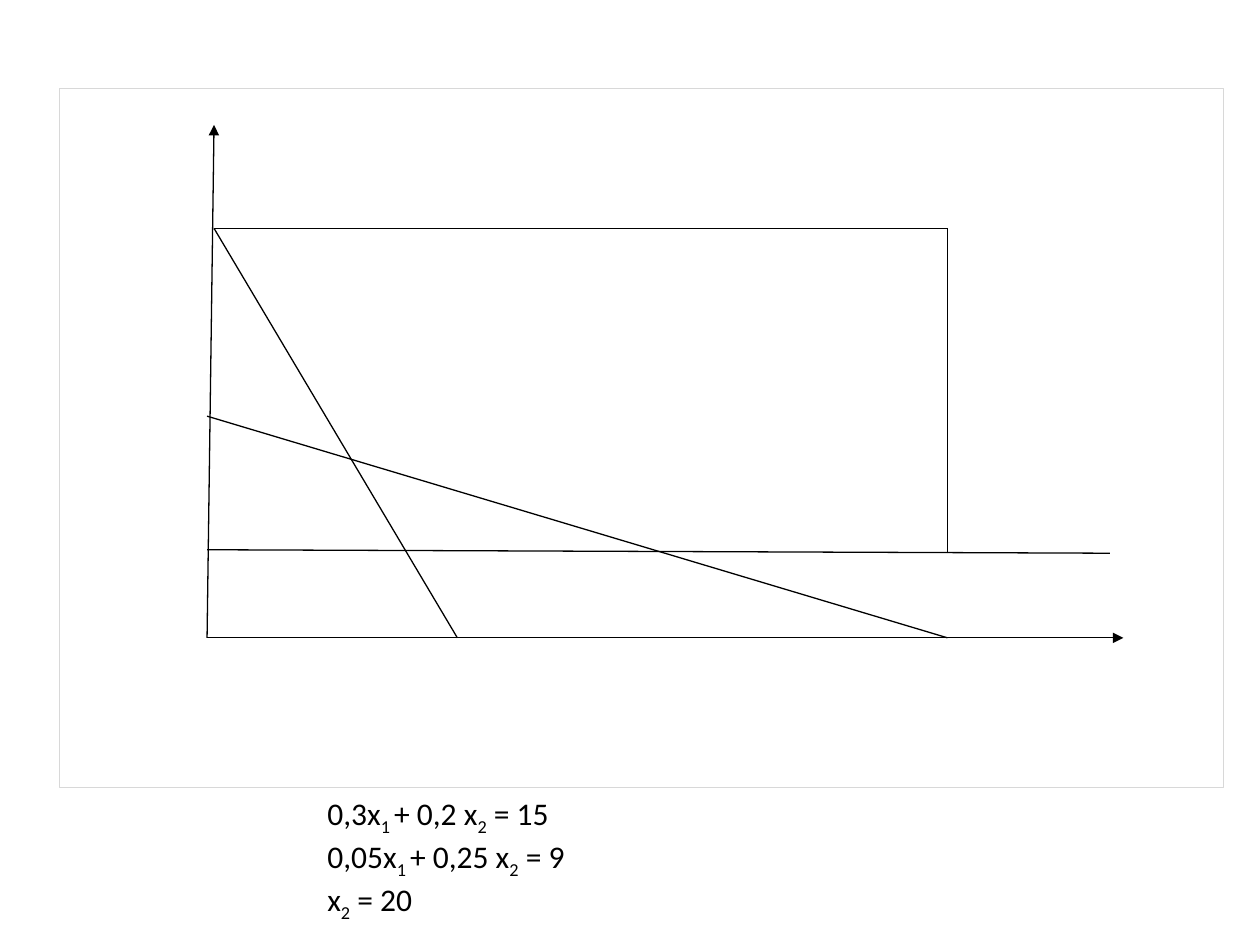
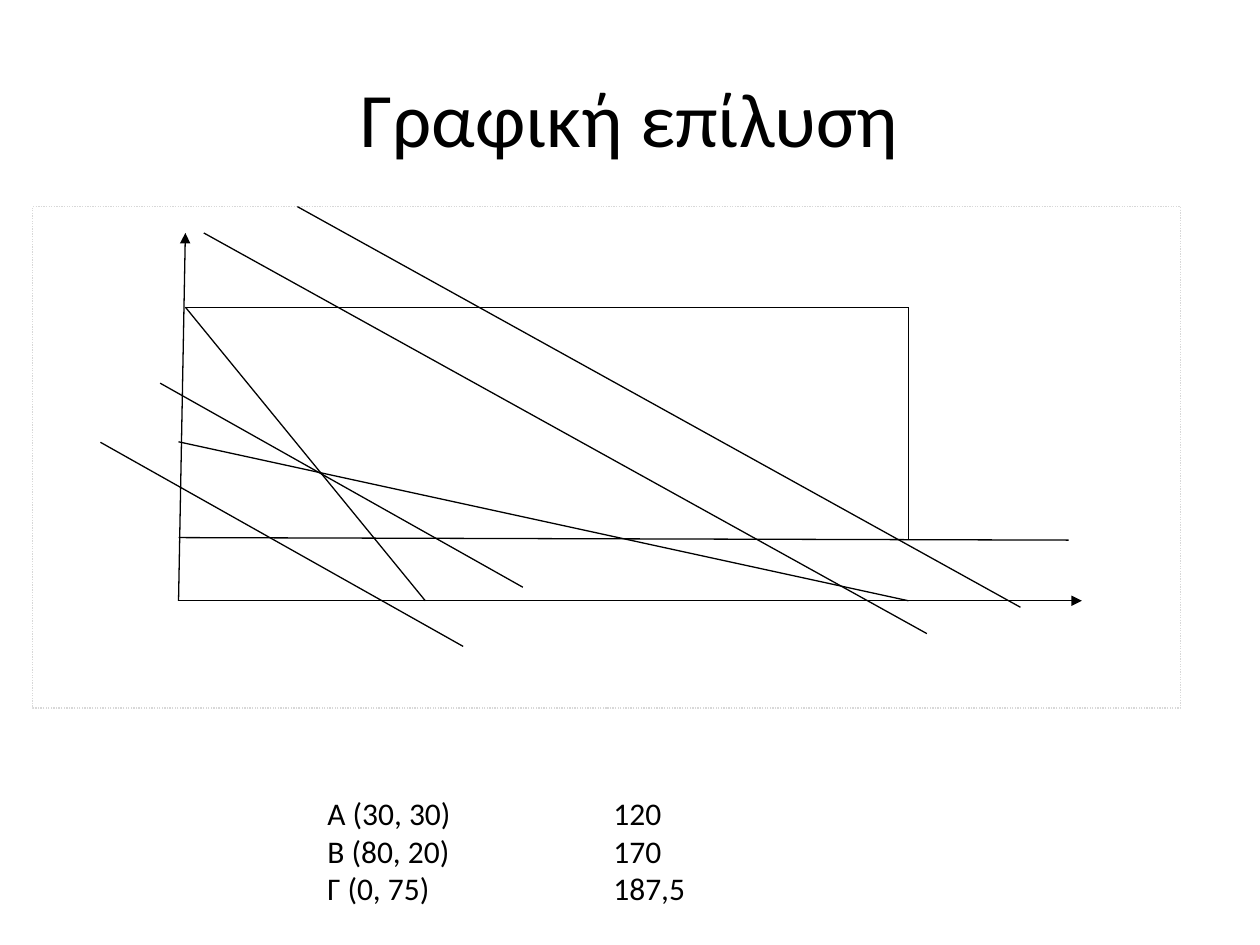
from lxml.etree import SubElement
from pptx import Presentation
from pptx.dml.color import RGBColor
from pptx.enum.dml import MSO_LINE
from pptx.enum.shapes import MSO_CONNECTOR, MSO_SHAPE
from pptx.enum.text import MSO_ANCHOR, MSO_AUTO_SIZE, PP_ALIGN
from pptx.oxml.ns import qn
from pptx.util import Inches, Pt

FONT = "Calibri"
INK = "000000"
FRAME_GREY = "D8D8D8"
LINE_WIDTH = 0.75
NOTES_BOX = (2.5, 6.25, 5, 1.01)
VALUE_TAB = 2.27

# Graph points are percentages of the frame: (column, row).
ORIGIN = (12.7, 78.6)
Y_AXIS_TOP = (13.3, 5.25)
X_AXIS_END = (91.4, 78.6)
UPPER_LEFT = (13.3, 20.05)
UPPER_RIGHT = (76.3, 20.05)
LOWER_RIGHT = (76.3, 66.5)

AXES = [(ORIGIN, Y_AXIS_TOP), (ORIGIN, X_AXIS_END)]
CONSTRAINTS = [
    (UPPER_LEFT, (34.2, 78.6)),
    ((12.7, 66), (90.25, 66.5)),
    ((12.7, 46.9), (76.3, 78.6)),
]
REGION_EDGES = [(UPPER_LEFT, UPPER_RIGHT), (LOWER_RIGHT, UPPER_RIGHT)]

SHORT_SLOPE = (31.6, 40.7)
LONG_SLOPE = (63, 79.9)
OBJECTIVE_LINES = [
    ((5.9, 47), SHORT_SLOPE),
    ((11.1, 35.2), SHORT_SLOPE),
    ((14.9, 5.25), LONG_SLOPE),
    ((23.05, 0), LONG_SLOPE),
]

# Text between underscores is subscript.
EQUATIONS = ["0,3x_1 _+ 0,2 x_2_ = 15", "0,05x_1 _+ 0,25 x_2_ = 9", "x_2_ = 20"]
CORNERS = ["Α (30, 30)\t120", "Β (80, 20)\t170", "Γ (0, 75)\t187,5"]


def color(hex_value):
    return RGBColor.from_string(hex_value)


def style_line(line, hex_value):
    line.color.rgb = color(hex_value)
    line.width = Pt(LINE_WIDTH)


def add_frame(group, frame, dash):
    shape = group.shapes.add_shape(MSO_SHAPE.RECTANGLE, *map(Inches, frame))
    shape.shadow.inherit = False
    shape.fill.background()
    style_line(shape.line, FRAME_GREY)
    shape.line.dash_style = dash


def add_line(group, frame, start, end, arrow=False):
    """Join two points given as percentages of the frame."""
    left, top, width, height = frame
    ends = [
        Inches(length)
        for column, row in (start, end)
        for length in (left + width * column / 100, top + height * row / 100)
    ]
    connector = group.shapes.add_connector(MSO_CONNECTOR.STRAIGHT, *ends)
    style_line(connector.line, INK)
    if arrow:
        SubElement(connector.line._get_or_add_ln(), qn("a:tailEnd"), type="triangle")
    SubElement(connector._element.spPr, qn("a:effectLst"))


def add_graph(slide, frame, dash=MSO_LINE.SOLID, objectives=()):
    group = slide.shapes.add_group_shape()
    add_frame(group, frame, dash)
    for start, end in AXES:
        add_line(group, frame, start, end, arrow=True)
    for start, end in CONSTRAINTS + REGION_EDGES:
        add_line(group, frame, start, end)
    for (column, row), (across, down) in objectives:
        add_line(group, frame, (column, row), (column + across, row + down))


def format_font(font, size):
    font.name = FONT
    font.size = Pt(size)
    font.color.rgb = color(INK)


def add_text_box(slide, box):
    text_frame = slide.shapes.add_textbox(*map(Inches, box)).text_frame
    text_frame.word_wrap = True
    return text_frame


def add_title(slide, title):
    text_frame = add_text_box(slide, (0.5, 0.3, 9, 1.25))
    text_frame.vertical_anchor = MSO_ANCHOR.MIDDLE
    text_frame.text = title
    paragraph = text_frame.paragraphs[0]
    paragraph.alignment = PP_ALIGN.CENTER
    format_font(paragraph.runs[0].font, 44)


def add_tab_stop(paragraph, position):
    tabs = SubElement(paragraph._p.get_or_add_pPr(), qn("a:tabLst"))
    SubElement(tabs, qn("a:tab"), pos=str(Inches(position)), algn="l")


def add_notes(slide, lines):
    """Write the lines below the graph, with subscripts and aligned values."""
    text_frame = add_text_box(slide, NOTES_BOX)
    text_frame.auto_size = MSO_AUTO_SIZE.SHAPE_TO_FIT_TEXT
    for index, line in enumerate(lines):
        paragraph = text_frame.add_paragraph() if index else text_frame.paragraphs[0]
        if "\t" in line:
            add_tab_stop(paragraph, VALUE_TAB)
        for position, part in enumerate(line.split("_")):
            run = paragraph.add_run()
            run.text = part
            format_font(run.font, 18)
            if position % 2:
                run.font._element.set("baseline", "-25000")


def main():
    presentation = Presentation()
    presentation.slide_width = Inches(10)
    presentation.slide_height = Inches(7.5)
    blank = presentation.slide_layouts[6]

    constraints_slide = presentation.slides.add_slide(blank)
    add_graph(constraints_slide, (0.47, 0.7, 9.24, 5.55))
    add_notes(constraints_slide, EQUATIONS)

    solution_slide = presentation.slides.add_slide(blank)
    add_title(solution_slide, "Γραφική επίλυση")
    add_graph(solution_slide, (0.26, 1.64, 9.11, 3.98),
              MSO_LINE.ROUND_DOT, OBJECTIVE_LINES)
    add_notes(solution_slide, CORNERS)

    presentation.save("out.pptx")


if __name__ == "__main__":
    main()
